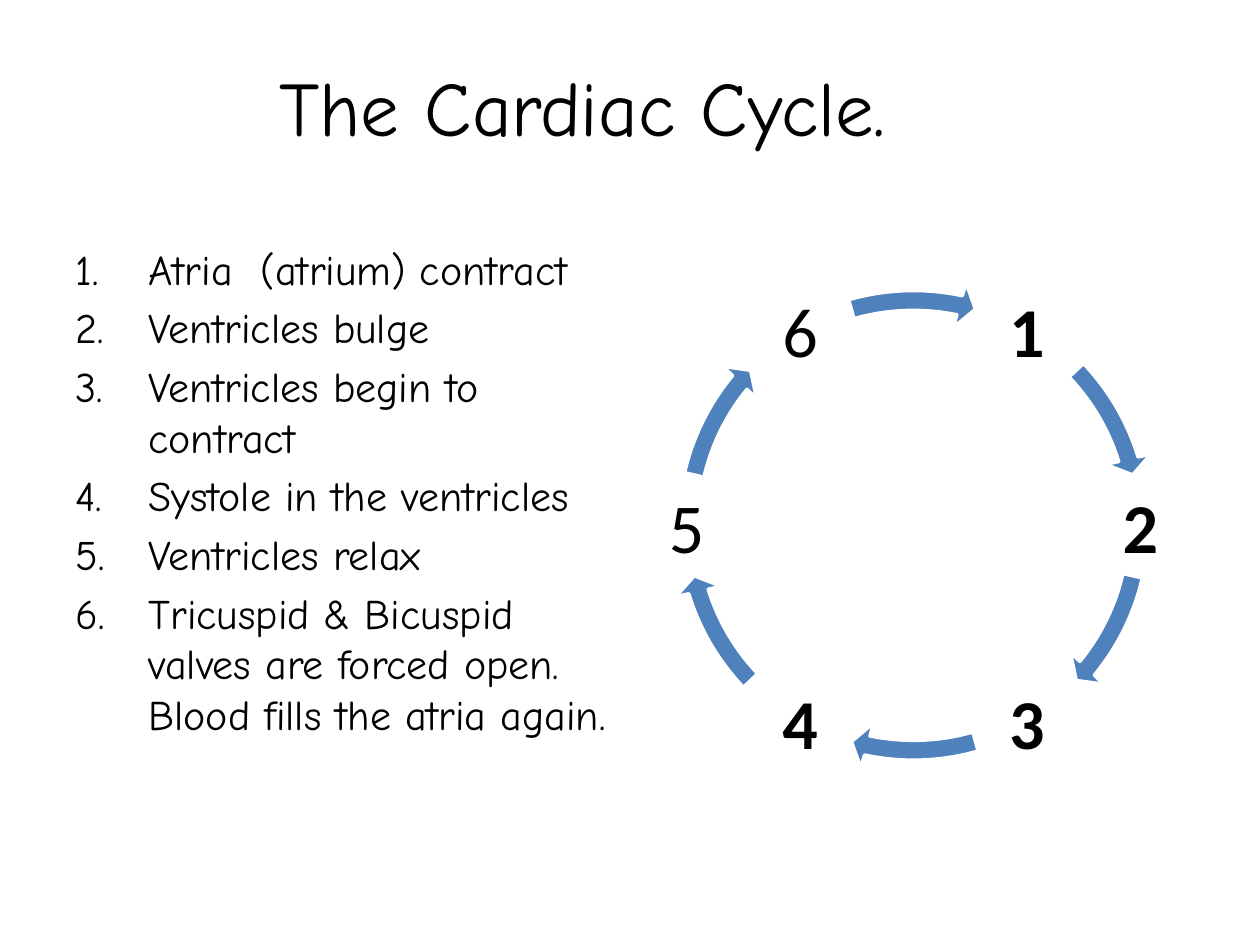
from dataclasses import dataclass
from math import cos, radians, sin

from lxml import etree
from pptx import Presentation
from pptx.dml.color import RGBColor
from pptx.enum.shapes import MSO_SHAPE
from pptx.enum.text import MSO_ANCHOR, PP_ALIGN
from pptx.oxml.ns import qn
from pptx.util import Inches, Pt

CIRCULAR_ARROW = MSO_SHAPE.CIRCULAR_ARROW
MIDDLE = MSO_ANCHOR.MIDDLE
TOP = MSO_ANCHOR.TOP
CENTER = PP_ALIGN.CENTER
LEFT = PP_ALIGN.LEFT


@dataclass(frozen=True)
class Theme:
    """Colours, fonts and type sizes of the slide."""
    text: RGBColor = RGBColor(0x00, 0x00, 0x00)
    arrow: RGBColor = RGBColor(0x4F, 0x81, 0xBD)
    outline: RGBColor = RGBColor(0xFF, 0xFF, 0xFF)
    text_font: str = "Comic Neue"
    number_font: str = "Calibri"
    title_size: float = 44
    body_size: float = 24
    number_size: float = 40
    outline_width: float = 2


THEME = Theme()
STAGES = [
    "Atria  (atrium) contract",
    "Ventricles bulge",
    "Ventricles begin to contract",
    "Systole in the ventricles",
    "Ventricles relax",
    "Tricuspid & Bicuspid valves are forced open. Blood fills the atria again.",
]
BOLD_STAGES = 4
CENTER_X, CENTER_Y = 7.25, 4.17
NUMBER_RADIUS = 1.8
NUMBER_BOX = 0.81
NUMBER_INSET = 0.06
ARROW_BOX = 3.94
ARROW_SPANS = [(316.38, 342.89), (12.94, 39.44), (73.98, 101.85)]
ADJUSTMENT_PER_DEGREE = 0.6


def add_text(shapes, box, lines, font, size, bold=False, align=LEFT, anchor=TOP):
    """Add a wrapped text box with one paragraph per line."""
    shape = shapes.add_textbox(*(Inches(length) for length in box))
    text_frame = shape.text_frame
    text_frame.word_wrap = True
    text_frame.vertical_anchor = anchor
    text_frame.text = "\n".join(lines)
    for paragraph in text_frame.paragraphs:
        paragraph.alignment = align
        for run in paragraph.runs:
            run.font.name = font
            run.font.size = Pt(size)
            run.font.bold = bold
            run.font.color.rgb = THEME.text
    return shape


def number_paragraphs(text_frame):
    """Turn the paragraphs into an automatically numbered list."""
    for paragraph in text_frame.paragraphs:
        paragraph.space_before = Pt(THEME.body_size * 0.2)
        properties = paragraph._p.get_or_add_pPr()
        properties.set("marL", str(Inches(0.58)))
        properties.set("indent", str(-Inches(0.58)))
        etree.SubElement(properties, qn("a:buAutoNum"), type="arabicPeriod")


def add_stage_number(shapes, number):
    """Place a stage number on the ring."""
    angle = radians(60 * (number - 2))
    left = CENTER_X + NUMBER_RADIUS * cos(angle) - NUMBER_BOX / 2
    top = CENTER_Y + NUMBER_RADIUS * sin(angle) - NUMBER_BOX / 2
    shape = add_text(shapes, (left, top, NUMBER_BOX, NUMBER_BOX), [str(number)],
                     THEME.number_font, THEME.number_size,
                     number <= BOLD_STAGES, CENTER, MIDDLE)
    text_frame = shape.text_frame
    text_frame.margin_left = text_frame.margin_right = Inches(NUMBER_INSET)
    text_frame.margin_top = text_frame.margin_bottom = Inches(NUMBER_INSET)


def add_cycle_arrow(shapes, start, end):
    """Add a curved arrow between two angles in degrees."""
    shape = shapes.add_shape(
        CIRCULAR_ARROW, Inches(CENTER_X - ARROW_BOX / 2),
        Inches(CENTER_Y - ARROW_BOX / 2), Inches(ARROW_BOX), Inches(ARROW_BOX))
    values = (0.04, 2.5, end * ADJUSTMENT_PER_DEGREE,
              start * ADJUSTMENT_PER_DEGREE, 0.047)
    for index, value in enumerate(values):
        shape.adjustments[index] = value
    shape.shadow.inherit = False
    shape.fill.solid()
    shape.fill.fore_color.rgb = THEME.arrow
    shape.line.color.rgb = THEME.outline
    shape.line.width = Pt(THEME.outline_width)


def add_cycle(slide):
    """Add the ring of numbers and arrows as one group."""
    shapes = slide.shapes.add_group_shape().shapes
    for index in range(len(STAGES)):
        half, position = divmod(index, len(ARROW_SPANS))
        start, end = ((angle + 180 * half) % 360 for angle in ARROW_SPANS[position])
        add_stage_number(shapes, index + 1)
        add_cycle_arrow(shapes, start, end)


def main():
    """Build and save the slide."""
    presentation = Presentation()
    presentation.slide_width = Inches(10)
    presentation.slide_height = Inches(7.5)
    slide = presentation.slides.add_slide(presentation.slide_layouts[6])
    add_text(slide.shapes, (0.5, 0.13, 8.25, 1.42), ["The Cardiac Cycle."],
             THEME.text_font, THEME.title_size, align=CENTER, anchor=MIDDLE)
    stage_list = add_text(slide.shapes, (0.5, 1.88, 4.42, 4.82), STAGES,
                          THEME.text_font, THEME.body_size)
    number_paragraphs(stage_list.text_frame)
    add_cycle(slide)
    presentation.save("out.pptx")


if __name__ == "__main__":
    main()
